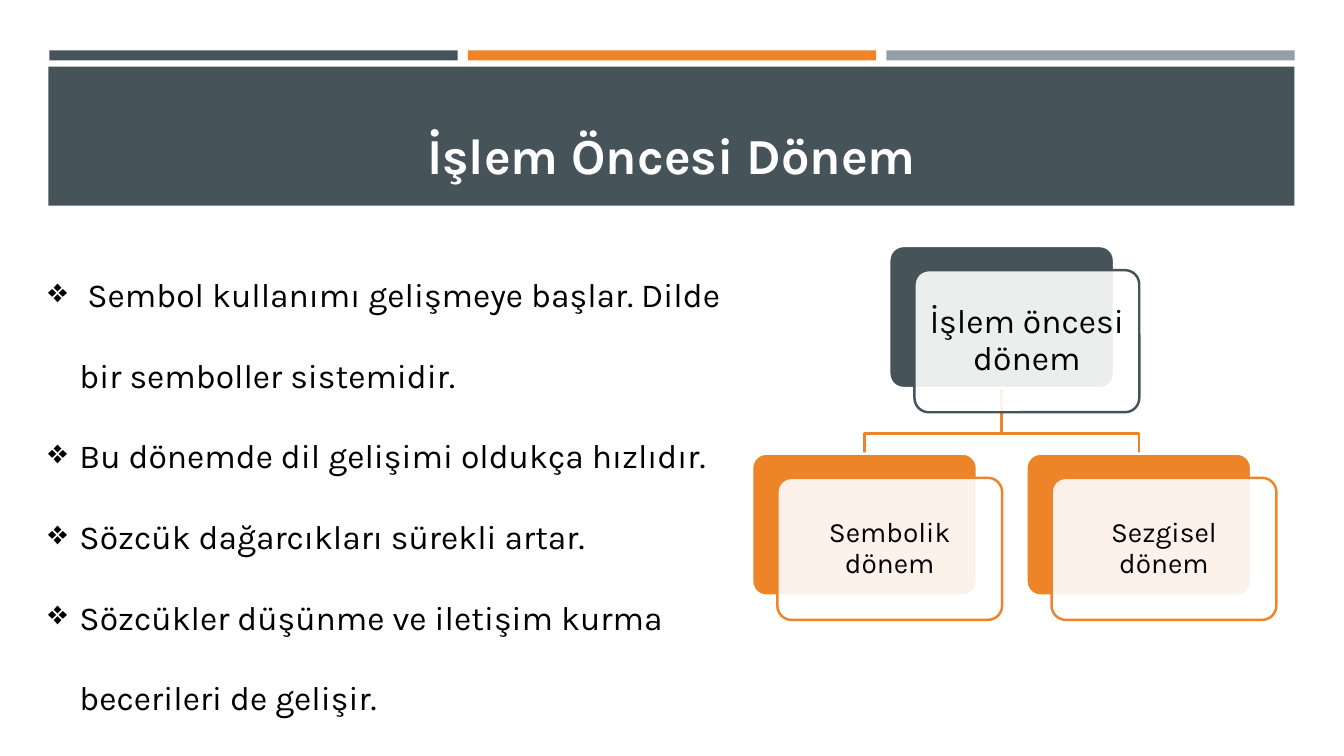
"""Build the slide on the preoperational stage, with its bullets and stage tree."""
import dataclasses
import typing

import lxml.etree
import pptx
import pptx.dml.color
import pptx.enum.shapes
import pptx.enum.text
import pptx.oxml.ns
import pptx.util

Inches = pptx.util.Inches
Pt = pptx.util.Pt
RGBColor = pptx.dml.color.RGBColor
Kind = pptx.enum.shapes.MSO_SHAPE
Align = pptx.enum.text.PP_ALIGN
Anchor = pptx.enum.text.MSO_ANCHOR

SLATE = RGBColor(0x46, 0x53, 0x59)
ORANGE = RGBColor(0xED, 0x84, 0x28)
GREY = RGBColor(0x96, 0x9F, 0xA7)
WHITE = RGBColor(0xFF, 0xFF, 0xFF)
BLACK = RGBColor(0, 0, 0)

CARD_WIDTH, CARD_HEIGHT = 2.23, 1.41
CARD_OFFSET = 0.25
LINE_WIDTH = 1.75
BULLET_INDENT = 0.31


@dataclasses.dataclass(frozen=True)
class Bar:
    left: float
    top: float
    width: float
    height: float
    color: RGBColor


@dataclasses.dataclass(frozen=True)
class Stage:
    label: str
    left: float
    top: float
    color: RGBColor
    size: int
    inset: float


BARS = [
    Bar(0.49 + 4.15 * column, 0.5, 4.05, 0.1, color)
    for column, color in enumerate((SLATE, ORANGE, GREY))
] + [Bar(0.48, 0.66, 12.36, 1.38, SLATE)]

PARENT = Stage("İşlem öncesi dönem", 8.82, 2.44, SLATE, 24, 0.14)
CHILDREN = [
    Stage("Sembolik dönem", 7.46, 4.5, ORANGE, 20, 0.12),
    Stage("Sezgisel dönem", 10.18, 4.5, ORANGE, 20, 0.12),
]

BULLETS = [
    " Sembol kullanımı gelişmeye başlar. Dilde bir semboller sistemidir.",
    "Bu dönemde dil gelişimi oldukça hızlıdır.",
    "Sözcük dağarcıkları sürekli artar.",
    "Sözcükler düşünme ve iletişim kurma becerileri de gelişir.",
]


def apply(target: typing.Any, values: dict[str, typing.Any]) -> None:
    """Set every named attribute of the target."""
    for name, value in values.items():
        setattr(target, name, value)


def write(para: typing.Any, text: str, size: int, color: RGBColor,
          bold: bool = False, **layout: typing.Any) -> None:
    """Put one formatted span in a paragraph."""
    apply(para, layout)
    span = para.add_run()
    span.text = text
    apply(span.font, {"name": "Karla", "size": Pt(size), "bold": bold})
    span.font.color.rgb = color


def add_box(page: typing.Any, left: float, top: float, width: float,
            height: float, anchor: typing.Any) -> typing.Any:
    """Add a wrapping text box and return its text frame."""
    box = page.shapes.add_textbox(
        Inches(left), Inches(top), Inches(width), Inches(height))
    apply(box.text_frame, {"word_wrap": True, "vertical_anchor": anchor})
    return box.text_frame


def add_bar(page: typing.Any, bar: Bar) -> None:
    """Draw a plain filled band."""
    shape = page.shapes.add_shape(
        Kind.RECTANGLE, Inches(bar.left), Inches(bar.top),
        Inches(bar.width), Inches(bar.height))
    shape.shadow.inherit = False
    shape.fill.solid()
    shape.fill.fore_color.rgb = bar.color
    shape.line.fill.background()


def add_bullets(page: typing.Any) -> None:
    """Write the double-spaced bullet list."""
    frame = add_box(page, 0.38, 2.27, 7.29, 4.81, Anchor.TOP)
    for index, text in enumerate(BULLETS):
        para = frame.add_paragraph() if index else frame.paragraphs[0]
        write(para, text, 24, BLACK, line_spacing=2.0)
        properties = para._p.get_or_add_pPr()
        properties.set("marL", str(Inches(BULLET_INDENT)))
        properties.set("indent", str(-Inches(BULLET_INDENT)))
        mark = lxml.etree.SubElement(properties, pptx.oxml.ns.qn("a:buChar"))
        mark.set("char", "❖")


def add_branch(page: typing.Any, parent: Stage, child: Stage) -> None:
    """Draw the bent line from a parent stage down to a child."""
    start_x = parent.left + CARD_WIDTH / 2
    end_x = child.left + CARD_WIDTH / 2
    bend_y = child.top - 0.2
    builder = page.shapes.build_freeform(
        Inches(start_x), Inches(parent.top + CARD_HEIGHT))
    builder.add_line_segments(
        [(Inches(x), Inches(y)) for x, y in
         ((start_x, bend_y), (end_x, bend_y), (end_x, child.top))],
        close=False)
    branch = builder.convert_to_shape()
    branch.shadow.inherit = False
    branch.fill.background()
    branch.line.color.rgb = child.color
    branch.line.width = Pt(LINE_WIDTH)


def add_card(page: typing.Any, left: float, top: float,
             fill: RGBColor, line: RGBColor) -> typing.Any:
    """Draw one rounded card."""
    card = page.shapes.add_shape(
        Kind.ROUNDED_RECTANGLE, Inches(left), Inches(top),
        Inches(CARD_WIDTH), Inches(CARD_HEIGHT))
    card.adjustments[0] = 0.1
    card.shadow.inherit = False
    card.fill.solid()
    card.fill.fore_color.rgb = fill
    card.line.color.rgb = line
    card.line.width = Pt(LINE_WIDTH)
    return card


def add_stage(page: typing.Any, stage: Stage) -> None:
    """Draw a solid card with a translucent labelled card over it."""
    add_card(page, stage.left, stage.top, stage.color, WHITE)
    front = add_card(page, stage.left + CARD_OFFSET, stage.top + CARD_OFFSET - 0.01,
                     WHITE, stage.color)
    tint = front.fill._xPr.find(".//" + pptx.oxml.ns.qn("a:srgbClr"))
    lxml.etree.SubElement(tint, pptx.oxml.ns.qn("a:alpha")).set("val", "90000")
    margin = Inches(stage.inset - 0.04)
    frame = front.text_frame
    apply(frame, {"word_wrap": True, "vertical_anchor": Anchor.MIDDLE,
                  "margin_left": margin, "margin_right": margin,
                  "margin_top": margin, "margin_bottom": margin})
    write(frame.paragraphs[0], stage.label, stage.size, BLACK,
          alignment=Align.CENTER, line_spacing=0.9)


def main() -> None:
    """Assemble and save the deck."""
    deck = pptx.Presentation()
    apply(deck, {"slide_width": Inches(13.33), "slide_height": Inches(7.5)})
    page = deck.slides.add_slide(deck.slide_layouts[6])
    for bar in BARS:
        add_bar(page, bar)
    title = add_box(page, 0.63, 0.8, 12.06, 1.08, Anchor.BOTTOM)
    write(title.paragraphs[0], "İşlem Öncesi Dönem", 36, WHITE, bold=True,
          alignment=Align.CENTER)
    add_bullets(page)
    for child in reversed(CHILDREN):
        add_branch(page, PARENT, child)
    for stage in (PARENT, *CHILDREN):
        add_stage(page, stage)
    deck.save("out.pptx")


if __name__ == "__main__":
    main()
